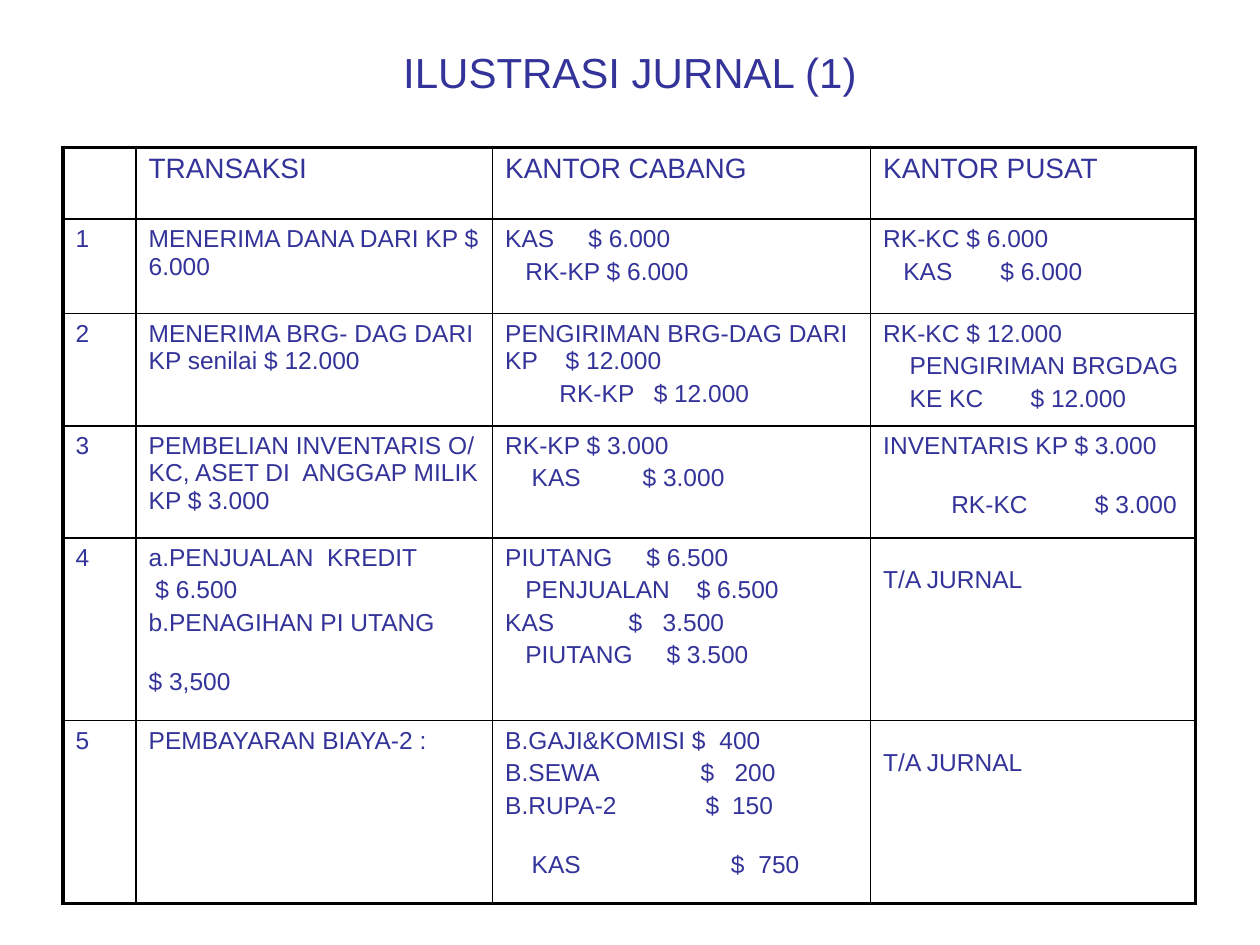
from lxml.etree import SubElement
from pptx import Presentation
from pptx.dml.color import RGBColor
from pptx.enum.text import MSO_ANCHOR, MSO_AUTO_SIZE, PP_ALIGN
from pptx.oxml import parse_xml
from pptx.oxml.ns import nsdecls, qn
from pptx.util import Inches, Pt

INDIGO = RGBColor(0x33, 0x33, 0x99)
BLACK = RGBColor(0, 0, 0)
FONT = "Arial"
MARGIN = 0.5
COLUMNS = [0.58, 2.83, 3, 2.58]
ROWS = [0.57, 0.75, 0.89, 0.89, 1.45, 1.45]
HEADER_SIZE, BODY_SIZE, TALL_SIZE = 16, 14, 28
OUTER, INNER = 2.25, 1


def line(text, *stops, tall=False):
    return text, stops, tall


JOURNAL = [
    [
        [],
        [line("TRANSAKSI")],
        [line("KANTOR CABANG")],
        [line("KANTOR PUSAT")],
    ],
    [
        [line("1")],
        [line("MENERIMA DANA DARI KP $ 6.000")],
        [line("KAS\t$ 6.000", 0.66), line("\tRK-KP $ 6.000", 0.16)],
        [line("RK-KC $ 6.000"), line("\tKAS\t$ 6.000", 0.16, 0.93)],
    ],
    [
        [line("2")],
        [line("MENERIMA BRG- DAG DARI KP senilai $ 12.000")],
        [line("PENGIRIMAN BRG-DAG DARI KP\t$ 12.000", 0.48),
         line("\tRK-KP\t$\t12.000", 0.43, 1.18, 1.34)],
        [line("RK-KC $ 12.000"),
         line("\tPENGIRIMAN BRGDAG", 0.21),
         line("\tKE KC\t$ 12.000", 0.21, 1.17)],
    ],
    [
        [line("3")],
        [line("PEMBELIAN INVENTARIS O/ KC, ASET DI  ANGGAP MILIK KP $ 3.000")],
        [line("RK-KP $ 3.000"), line("\tKAS\t$ 3.000", 0.21, 1.09)],
        [line("INVENTARIS KP $ 3.000"),
         line("\tRK-KC\t$ 3.000", 0.54, 1.68, tall=True)],
    ],
    [
        [line("4")],
        [line("a.PENJUALAN  KREDIT"),
         line(" $ 6.500"),
         line("b.PENAGIHAN PI UTANG"),
         line("$ 3,500", tall=True)],
        [line("PIUTANG\t$ 6.500", 1.12),
         line("\tPENJUALAN\t$ 6.500", 0.16, 1.52),
         line("KAS\t$\t3.500", 0.98, 1.25),
         line("\tPIUTANG\t$ 3.500", 0.16, 1.28)],
        [line("T/A JURNAL", tall=True)],
    ],
    [
        [line("5")],
        [line("PEMBAYARAN BIAYA-2 :")],
        [line("B.GAJI&KOMISI $\t400", 1.7),
         line("B.SEWA\t$\t200", 1.55, 1.82),
         line("B.RUPA-2\t$\t150", 1.59, 1.8),
         line("\tKAS\t$\t750", 0.21, 1.79, 2.01, tall=True)],
        [line("T/A JURNAL", tall=True)],
    ],
]


def style_font(font, size):
    font.name = FONT
    font.size = Pt(size)
    font.color.rgb = INDIGO


def add_title(slide, text):
    title = slide.shapes.title
    title.left, title.top = Inches(MARGIN), Inches(0.3)
    title.width, title.height = Inches(9), Inches(0.53)
    frame = title.text_frame
    frame.auto_size = MSO_AUTO_SIZE.NONE
    frame.vertical_anchor = MSO_ANCHOR.MIDDLE
    heading = frame.paragraphs[0]
    heading.text = text
    heading.alignment = PP_ALIGN.CENTER
    style_font(heading.font, 24)


def set_tab_stops(paragraph, stops):
    properties = paragraph._p.get_or_add_pPr()
    tab_list = parse_xml(f"<a:tabLst {nsdecls('a')}/>")
    for stop in stops:
        SubElement(tab_list, qn("a:tab"), pos=str(Inches(stop)), algn="l")
    default_run = properties.find(qn("a:defRPr"))
    default_run.addprevious(tab_list)


def write_entry(cell, entry, size):
    frame = cell.text_frame
    for index, (text, stops, tall) in enumerate(entry):
        paragraph = frame.paragraphs[0] if index == 0 else frame.add_paragraph()
        paragraph.add_run().text = text
        style_font(paragraph.font, size)
        paragraph.space_before = Pt(0.2 * (TALL_SIZE if tall else size))
        for run in paragraph.runs:
            style_font(run.font, size)
        if tall:
            spacer = paragraph.add_run()
            spacer.text = " "
            style_font(spacer.font, TALL_SIZE)
        if stops:
            set_tab_stops(paragraph, stops)


def set_borders(cell, widths):
    properties = cell._tc.get_or_add_tcPr()
    for index, (side, width) in enumerate(zip("LRTB", widths)):
        border = parse_xml(
            f'<a:ln{side} {nsdecls("a")} w="{Pt(width)}"><a:solidFill>'
            f'<a:srgbClr val="{BLACK}"/></a:solidFill></a:ln{side}>')
        properties.insert(index, border)


def add_journal(slide):
    table = slide.shapes.add_table(
        len(ROWS), len(COLUMNS), Inches(MARGIN), Inches(1.17),
        Inches(sum(COLUMNS)), Inches(sum(ROWS))).table
    table.first_row = table.horz_banding = False
    for column, width in zip(table.columns, COLUMNS):
        column.width = Inches(width)
    last_row, last_column = len(ROWS) - 1, len(COLUMNS) - 1
    for r, entries in enumerate(JOURNAL):
        table.rows[r].height = Inches(ROWS[r])
        for c, entry in enumerate(entries):
            cell = table.cell(r, c)
            cell.fill.background()
            write_entry(cell, entry, HEADER_SIZE if r == 0 else BODY_SIZE)
            edges = (c == 0, c == last_column, r == 0, r == last_row)
            set_borders(cell, [OUTER if edge else INNER for edge in edges])


def main():
    deck = Presentation()
    deck.slide_width, deck.slide_height = Inches(10), Inches(7.5)
    slide = deck.slides.add_slide(deck.slide_layouts[5])
    add_title(slide, "ILUSTRASI JURNAL (1)")
    add_journal(slide)
    deck.save("out.pptx")


if __name__ == "__main__":
    main()
